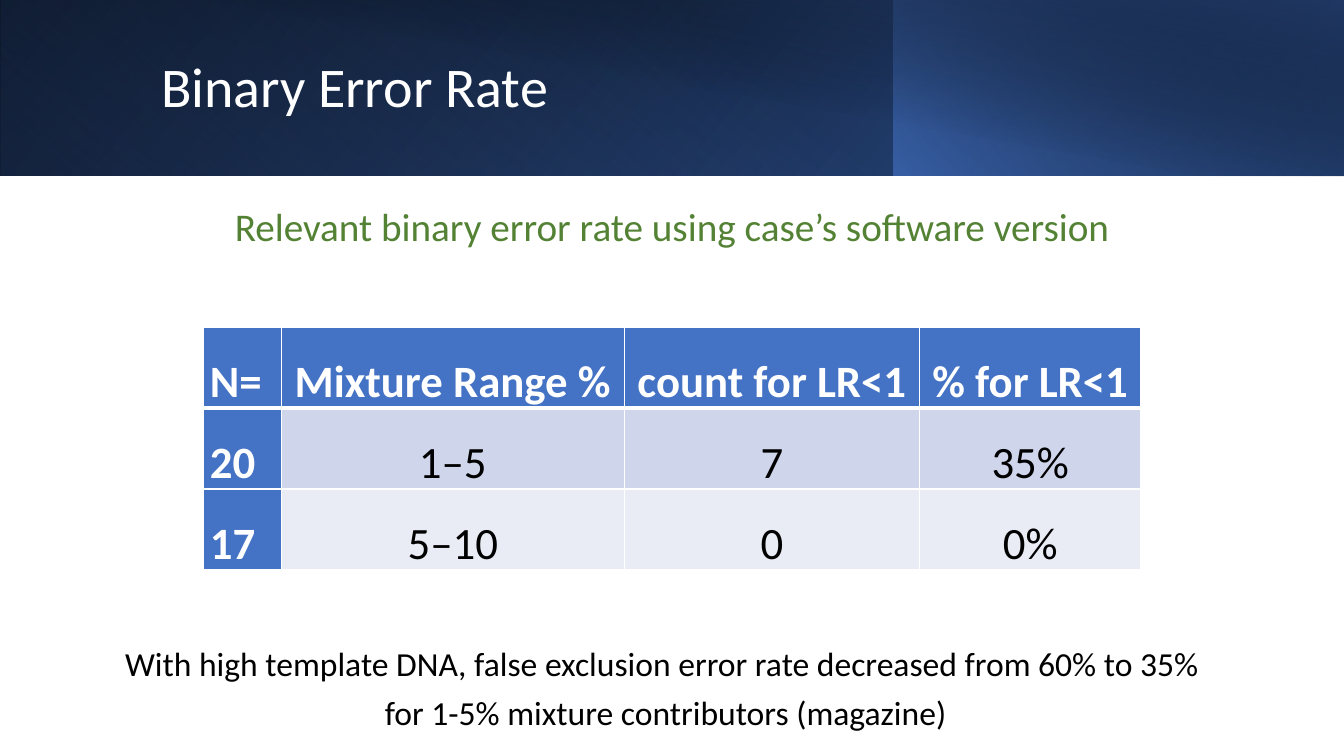
"""Build the Binary Error Rate slide: gradient banner, summary table and takeaway."""
from dataclasses import dataclass

from pptx import Presentation
from pptx.dml.color import RGBColor
from pptx.enum.shapes import MSO_SHAPE as Shape
from pptx.enum.text import MSO_ANCHOR as Anchor, PP_ALIGN as Align
from pptx.oxml import parse_xml
from pptx.oxml.ns import nsdecls, qn
from pptx.oxml.xmlchemy import OxmlElement
from pptx.util import Pt


@dataclass(frozen=True)
class Theme:
    font: str = "Calibri"
    white: str = "FFFFFF"
    black: str = "000000"
    blue: str = "4472C4"
    deep_blue: str = "2F5597"
    navy: str = "203864"
    green: str = "548235"
    bands: tuple = ("CFD5EA", "E9EBF5")
    title: int = 40
    subtitle: int = 28
    note: int = 24
    cell: int = 32


THEME = Theme()
ROWS = [
    ("N=", "Mixture Range %", "count for LR<1", "% for LR<1"),
    ("20", "1–5", "7", "35%"),
    ("17", "5–10", "0", "0%"),
]
COLUMN_WIDTHS = (56, 245, 211, 158)


def add_span(para, text, size, color, bold=False):
    span = para.add_run()
    span.text = text
    span.font.name = THEME.font
    span.font.size = Pt(size)
    span.font.bold = bold
    span.font.color.rgb = RGBColor.from_string(color)


def add_gradient(page, frame, stops, angle, flip=True, rotation=0):
    band = page.shapes.add_shape(Shape.RECTANGLE, *map(Pt, frame))
    band.shadow.inherit = False
    band.line.fill.background()
    band.rotation = rotation
    if flip:
        band.element.spPr.find(qn("a:xfrm")).set("flipH", "1")
    band.fill.gradient()
    band.fill.gradient_angle = 360 - angle
    for stop, (position, color, _) in zip(band.fill.gradient_stops, stops):
        stop.position = position / 100
        stop.color.rgb = RGBColor.from_string(color)
    colors = band.element.spPr.iter(qn("a:srgbClr"))
    for color, (_, _, opacity) in zip(list(colors), stops):
        alpha = OxmlElement("a:alpha")
        alpha.set("val", str(opacity * 1000))
        color.append(alpha)


def add_text(page, frame, lines, size, color, align=Align.CENTER):
    box = page.shapes.add_textbox(*map(Pt, frame)).text_frame
    box.word_wrap = True
    box.vertical_anchor = Anchor.MIDDLE
    for index, (text, spacing) in enumerate(lines):
        para = box.add_paragraph() if index else box.paragraphs[0]
        para.alignment = align
        para.line_spacing = spacing
        para.space_before = Pt(0)
        add_span(para, text, size, color)


def set_borders(cell, top, bottom):
    properties = cell._tc.get_or_add_tcPr()
    widths = {"lnL": 1, "lnR": 1, "lnT": top, "lnB": bottom}
    for index, (side, width) in enumerate(widths.items()):
        properties.insert(index, parse_xml(
            f'<a:{side} {nsdecls("a")} w="{Pt(width)}"><a:solidFill>'
            f'<a:srgbClr val="{THEME.white}"/></a:solidFill></a:{side}>'))


def fill_cell(cell, text, row, column):
    heading = row == 0 or column == 0
    cell.margin_left = cell.margin_right = Pt(5)
    cell.margin_top = cell.margin_bottom = Pt(0)
    cell.fill.solid()
    color = THEME.blue if heading else THEME.bands[row - 1]
    cell.fill.fore_color.rgb = RGBColor.from_string(color)
    set_borders(cell, 3 if row == 1 else 1, 3 if row == 0 else 1)
    para = cell.text_frame.paragraphs[0]
    para.alignment = Align.CENTER if column else Align.LEFT
    para.line_spacing = 1.5
    add_span(para, text, THEME.cell, THEME.white if heading else THEME.black, heading)


def add_error_table(page, left, top, height):
    frame = page.shapes.add_table(
        len(ROWS), len(COLUMN_WIDTHS),
        Pt(left), Pt(top), Pt(sum(COLUMN_WIDTHS)), Pt(height))
    table = frame.table
    table.first_col = True
    table.horz_banding = False
    for column, width in zip(table.columns, COLUMN_WIDTHS):
        column.width = Pt(width)
    for row, values in enumerate(ROWS):
        for column, text in enumerate(values):
            fill_cell(table.cell(row, column), text, row, column)


def add_banner(page):
    add_gradient(page, (0, 0, 960, 125.5),
                 [(0, THEME.black, 100), (100, THEME.deep_blue, 100)], 140)
    add_gradient(page, (0, 0, 639, 125.5),
                 [(20, THEME.blue, 0), (100, THEME.navy, 55)], 230, rotation=180)
    add_gradient(page, (638.5, 0, 321.5, 125.5),
                 [(0, THEME.blue, 66), (100, THEME.black, 30)], 220)
    add_gradient(page, (36, 0, 924, 126),
                 [(50, THEME.black, 0), (99, THEME.navy, 52)], 280, flip=False)


def main():
    deck = Presentation()
    deck.slide_width, deck.slide_height = Pt(960), Pt(540)
    page = deck.slides.add_slide(deck.slide_layouts[6])
    add_banner(page)
    add_text(page, (108, 23, 779, 81.5), [("Binary Error Rate", 0.9)],
             THEME.title, THEME.white, Align.LEFT)
    add_text(page, (107.5, 118, 745, 91),
             [("Relevant binary error rate using case’s software version", 0.9)],
             THEME.subtitle, THEME.green)
    add_text(page, (8.5, 445.5, 934, 94.5), [
        ("With high template DNA, false exclusion error rate decreased from 60% to 35% ", 0.9),
        ("for 1-5% mixture contributors (magazine)", 1.2),
    ], THEME.note, THEME.black)
    add_error_table(page, 145, 234, 154)
    deck.save("out.pptx")


if __name__ == "__main__":
    main()
